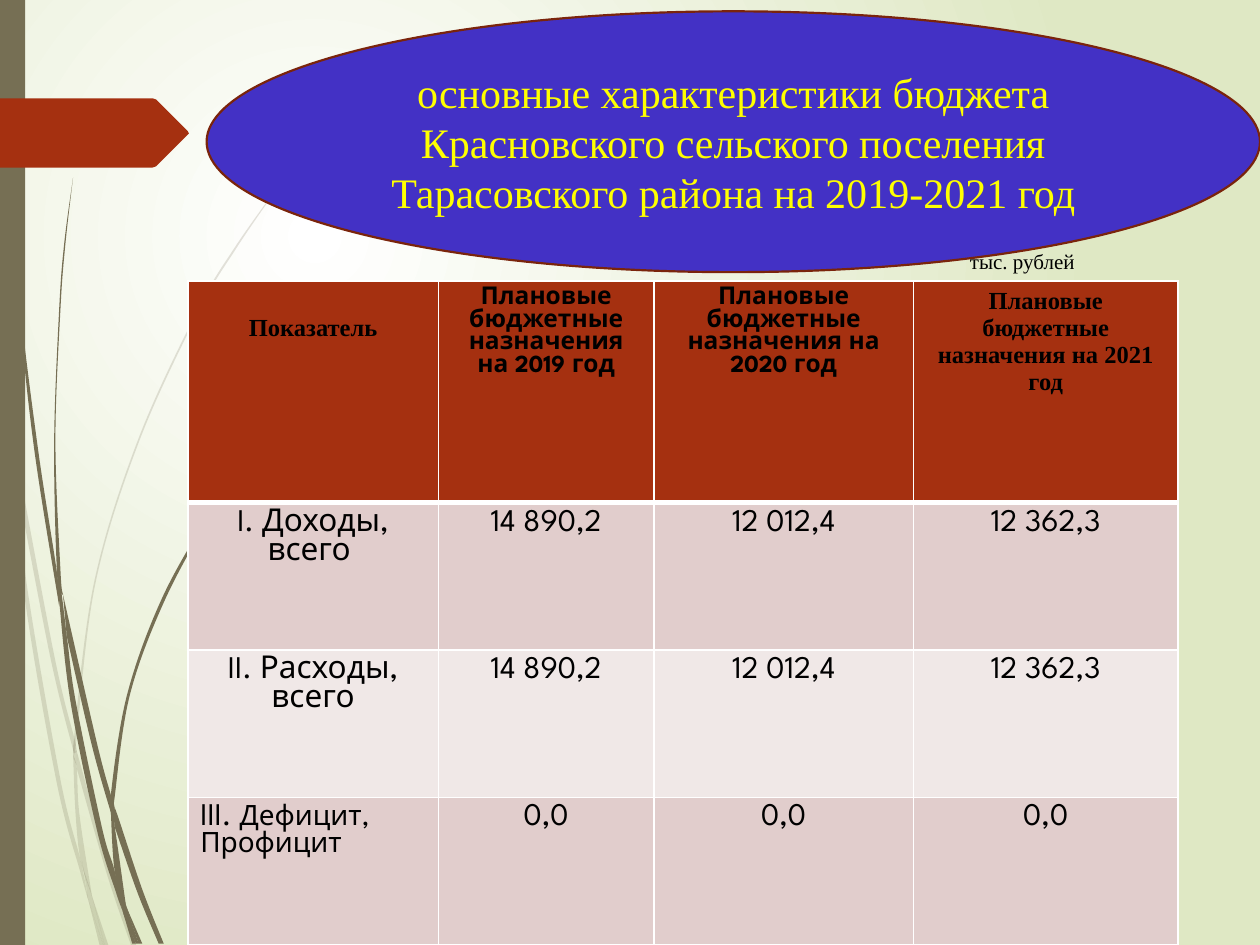
from lxml import etree
from pptx import Presentation
from pptx.dml.color import RGBColor
from pptx.enum.shapes import MSO_SHAPE
from pptx.enum.text import MSO_ANCHOR, PP_ALIGN
from pptx.oxml.ns import qn
from pptx.util import Inches, Pt

OVAL, RECT = MSO_SHAPE.OVAL, MSO_SHAPE.RECTANGLE
MIDDLE = MSO_ANCHOR.MIDDLE
CENTER, LEFT = PP_ALIGN.CENTER, PP_ALIGN.LEFT
COLORS = {"white": "FFFFFF", "lime": "DFE8C4", "olive": "766F54", "rust": "A53010",
          "rose": "E1CDCC", "blush": "F0E8E7", "blue": "4331C5", "brown": "7A240C",
          "yellow": "FFFF00", "black": "000000"}
INK = {name: RGBColor.from_string(code) for name, code in COLORS.items()}
SERIF, SANS = "Times New Roman", "League Spartan"
WIDE, HIGH = 10, 7.5

deck = Presentation()
deck.slide_width, deck.slide_height = Inches(WIDE), Inches(HIGH)
slide = deck.slides.add_slide(deck.slide_layouts[6])
shapes = slide.shapes
base = deck.slide_master.shapes._spTree


def bend(edge):
    knots = [edge[0], *edge, edge[-1]]
    curve = []
    for a, b, c, d in zip(knots, knots[1:], knots[2:], knots[3:]):
        curve += [tuple(q + (r - p) / 6 for p, q, r in zip(a, b, c)),
                  tuple(r - (s - q) / 6 for q, r, s in zip(b, c, d)), c]
    return curve


def draw(points, color):
    trail = [(Inches(x), Inches(y)) for x, y in points]
    pen = shapes.build_freeform(*trail[0])
    pen.add_line_segments(trail[1:], close=True)
    shape = pen.convert_to_shape()
    shape.shadow.inherit = False
    shape.fill.solid()
    shape.fill.fore_color.rgb = INK[color]
    shape.line.fill.background()
    base.append(shape._element)
    return shape


back = slide.background.fill
back.gradient()
for stop, name in zip(back.gradient_stops, ("white", "lime")):
    stop.color.rgb = INK[name]
grad = slide.background._cSld.find(".//" + qn("a:gradFill"))
grad.remove(grad.find(qn("a:lin")))
ring = etree.SubElement(grad, qn("a:path"), path="circle")
etree.SubElement(ring, qn("a:fillToRect"), l="50000", t="50000", r="100000", b="100000")

pale = [
    ([(0, 2.82), (0.06, 3.22), (0.08, 3.5)], [(0, 2.99), (0.07, 3.44), (0.08, 3.5)]),
    ([(0.1, 3.45), (0.43, 5.2), (0.59, 5.86)],
     [(0.12, 3.76), (0.4, 5.22), (0.59, 5.99)]),
    ([(0.61, 5.96), (0.64, 6.07), (0.88, 6.92), (1.08, 7.5)],
     [(0.61, 6.1), (0.85, 6.94), (1.04, 7.5)]),
    ([(0.73, 7.11), (0.86, 7.5)], [(0.73, 7.11), (0.83, 7.5)]),
    ([(0.08, 3.5), (0.12, 3.76), (0.22, 4.69), (0.48, 6.19), (0.64, 6.83), (0.7, 7.14)],
     [(0.08, 3.5), (0.19, 4.7), (0.45, 6.21), (0.64, 6.93), (0.7, 7.14)]),
    ([(0.58, 5.99), (0.6, 6.46), (0.64, 6.83), (0.73, 7.11)],
     [(0.58, 5.99), (0.61, 6.1), (0.63, 6.46), (0.73, 7.11)]),
    ([(2.17, 1.53), (1.86, 1.97), (1.58, 2.44), (1.1, 3.48), (0.75, 4.61),
      (0.59, 5.84), (0.61, 5.96)],
     [(2.17, 1.54), (1.87, 1.98), (1.59, 2.45), (1.11, 3.49), (0.76, 4.62),
      (0.61, 5.84), (0.61, 5.96)]),
    ([(0.7, 7.14), (0.82, 7.5)], [(0.7, 7.14), (0.79, 7.5)]),
    ([(0.59, 5.86), (0.58, 5.99), (0.61, 6.08)],
     [(0.59, 5.86), (0.61, 5.96), (0.61, 6.1)]),
    ([(0.65, 6.83), (0.67, 6.92), (0.73, 7.11), (0.83, 7.5)],
     [(0.65, 6.83), (0.69, 7.07), (0.7, 7.14), (0.82, 7.5)]),
]
dark = [
    ([(0.02, 0), (0.03, 0.48), (0.05, 1.1), (0.14, 2.33), (0.27, 3.55), (0.47, 4.81)],
     [(0.03, 0), (0.04, 0.48), (0.06, 1.09), (0.15, 2.32), (0.3, 3.55), (0.45, 4.53),
      (0.47, 4.81)]),
    ([(0.5, 4.72), (0.77, 5.9), (0.88, 6.31)],
     [(0.53, 5.05), (0.73, 5.92), (0.88, 6.45)]),
    ([(0.91, 6.41), (0.94, 6.49), (1.13, 7.06), (1.3, 7.49)],
     [(0.91, 6.56), (1.09, 7.08), (1.26, 7.49)]),
    ([(0.47, 4.77), (0.53, 5.05), (0.6, 5.56), (0.81, 6.57), (0.91, 6.91), (0.97, 7.22)],
     [(0.47, 4.77), (0.56, 5.57), (0.77, 6.59), (0.92, 7.08), (0.97, 7.22)]),
    ([(0.58, 1.41), (0.51, 1.93), (0.47, 2.45), (0.43, 3.49), (0.45, 4.49), (0.49, 4.72)],
     [(0.58, 1.41), (0.52, 1.93), (0.48, 2.45), (0.44, 3.49), (0.48, 4.53), (0.5, 4.72)]),
    ([(1, 7.19), (1.13, 7.49)], [(1, 7.19), (1.1, 7.49)]),
    ([(0.45, 4.49), (0.49, 4.72), (0.53, 5.05)],
     [(0.45, 4.49), (0.47, 4.77), (0.53, 5.05)]),
    ([(2.15, 3.44), (1.91, 3.73), (1.68, 4.05), (1.29, 4.74), (1.01, 5.51),
      (0.88, 6.31), (0.91, 6.41)],
     [(2.16, 3.44), (1.91, 3.74), (1.69, 4.06), (1.31, 4.76), (1.03, 5.52),
      (0.91, 6.33), (0.91, 6.41)]),
    ([(0.97, 7.22), (1.08, 7.49)], [(0.97, 7.22), (1.05, 7.49)]),
    ([(0.88, 6.45), (0.91, 6.91), (1, 7.19)],
     [(0.88, 6.45), (0.91, 6.56), (1, 7.19)]),
    ([(0.88, 6.31), (0.88, 6.45), (0.91, 6.56)], [(0.88, 6.31), (0.91, 6.41), (0.91, 6.56)]),
    ([(0.91, 6.91), (0.96, 7.06), (1.1, 7.49)],
     [(0.91, 6.91), (0.97, 7.22), (1.08, 7.49)]),
]
for group, alpha in ((pale, "20000"), (dark, "100000")):
    for near, far in group:
        tip = [] if near[-1] == far[-1] else [near[-1], far[-1], far[-1]]
        blade = draw([near[0], *bend(near), *tip, *bend(far[::-1])], "olive")
        lines = list(blade._element.iter(qn("a:lnTo")))
        for first, *rest in zip(lines[::3], lines[1::3], lines[2::3]):
            first.tag = qn("a:cubicBezTo")
            for line in rest:
                first.append(line[0])
                line.getparent().remove(line)
        tint = blade._element.find(".//" + qn("a:srgbClr"))
        etree.SubElement(tint, qn("a:alpha"), val=alpha)

strip = shapes.add_shape(RECT, 0, 0, Inches(0.2), Inches(HIGH))
strip.shadow.inherit = False
strip.fill.solid()
strip.fill.fore_color.rgb = INK["olive"]
strip.line.fill.background()
base.append(strip._element)
draw([(0, 0.78), (1.21, 0.78), (1.24, 0.79), (1.49, 1.04), (1.5, 1.06), (1.49, 1.07),
      (1.24, 1.32), (1.21, 1.33), (0, 1.33)], "rust")

heads = ["Показатель"] + [f"Плановые бюджетные назначения на {year} год"
                          for year in (2019, 2020, 2021)]
sums = ["14 890,2", "12 012,4", "12 362,3"]
rows = [heads, ["I. Доходы,\nвсего ", *sums], ["II. Расходы, всего", *sums],
        ["III. \nПрофицит", "0,0", "0,0", "0,0"]]
cols = [1.99, 1.71, 2.06, 2.1]
tall = [1.76, 1.17, 1.17, 1.17]
fills = ["rust", "rose", "blush", "rose"]
table = shapes.add_table(len(rows), len(cols), Inches(1.49), Inches(2.23),
                         Inches(sum(cols)), Inches(sum(tall))).table
for col, width in zip(table.columns, cols):
    col.width = Inches(width)
for i, texts in enumerate(rows):
    table.rows[i].height = Inches(tall[i])
    for j, text in enumerate(texts):
        cell = table.cell(i, j)
        cell.fill.solid()
        cell.fill.fore_color.rgb = INK[fills[i]]
        cell.text_frame.text = text
        note = i == 3 and j == 0
        if note:
            cell.text_frame.paragraphs[0].add_run().text = "Дефицит,"
        for para in cell.text_frame.paragraphs:
            para.alignment = LEFT if note else CENTER
            for run in para.runs:
                font = run.font
                font.name = SERIF if i == 0 and j in (0, 3) else SANS
                small = note and run.text != "III. "
                font.size = Pt(14 if i == 0 else 16 if small else 18)
                font.bold = i == 0
                font.color.rgb = INK["black"]
        if i == 0:
            rule = etree.Element(qn("a:lnB"), w=str(Pt(3)))
            solid = etree.SubElement(rule, qn("a:solidFill"))
            etree.SubElement(solid, qn("a:srgbClr"), val=COLORS["white"])
            cell._tc.tcPr.insert(0, rule)
table.cell(0, 0).margin_top = Inches(0.27)

title = shapes.add_shape(OVAL, Inches(1.64), Inches(0.09), Inches(8.36), Inches(2.07))
title.shadow.inherit = False
title.fill.solid()
title.fill.fore_color.rgb = INK["blue"]
title.line.color.rgb = INK["brown"]
title.line.width = Pt(1.25)
unit = shapes.add_textbox(Inches(7.6), Inches(1.92), Inches(1.04), Inches(0.3))
words = "основные характеристики бюджета Красновского сельского поселения Тарасовского района на 2019-2021 год"
for shape, text, size, color, wrap, align in (
        (title, words, 24, "yellow", True, CENTER),
        (unit, "тыс. рублей", 12, "black", False, LEFT)):
    frame = shape.text_frame
    frame.text = text
    frame.word_wrap = wrap
    para = frame.paragraphs[0]
    para.alignment = align
    font = para.runs[0].font
    font.name, font.size, font.color.rgb = SERIF, Pt(size), INK[color]
title.text_frame.vertical_anchor = MIDDLE

deck.save("out.pptx")
